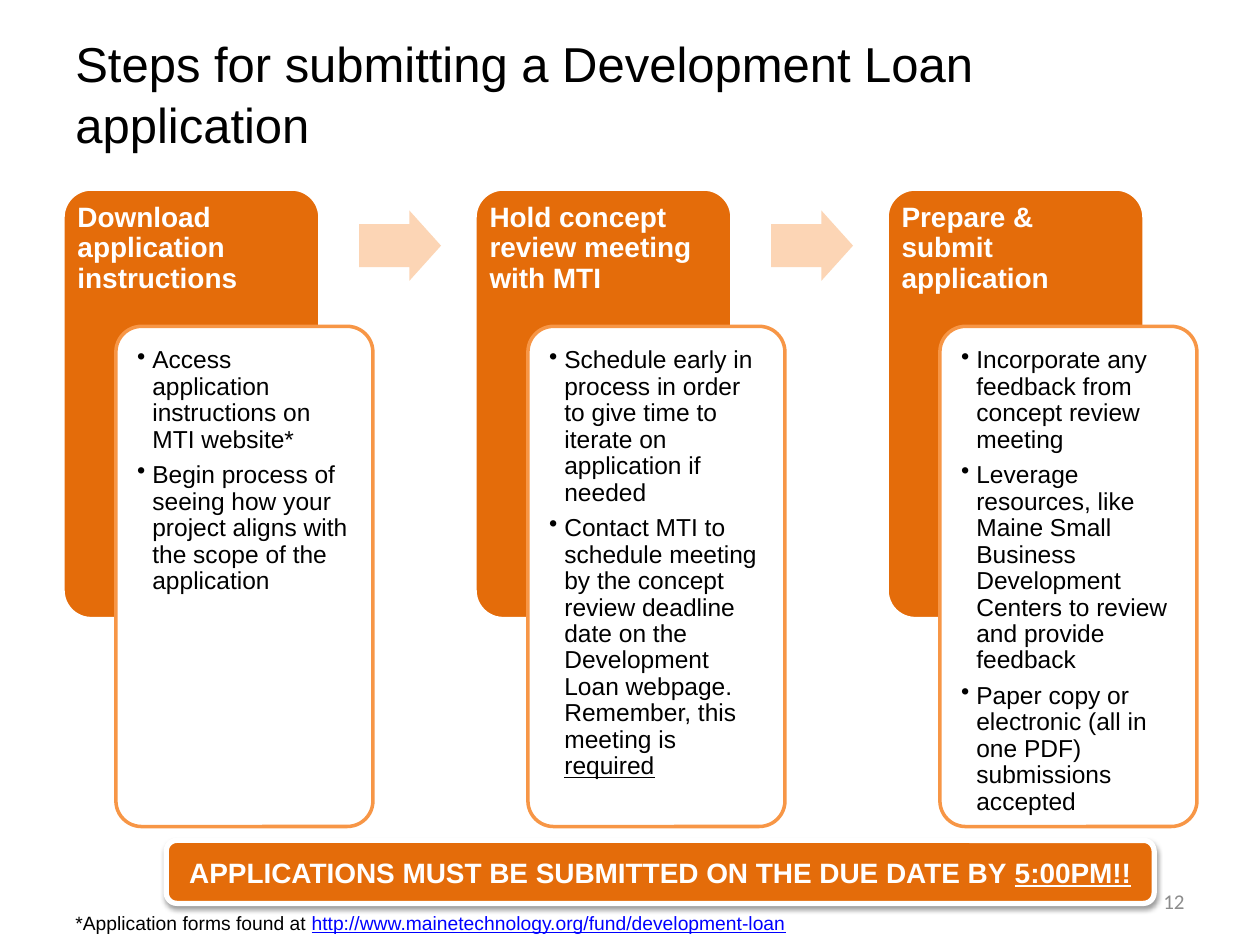
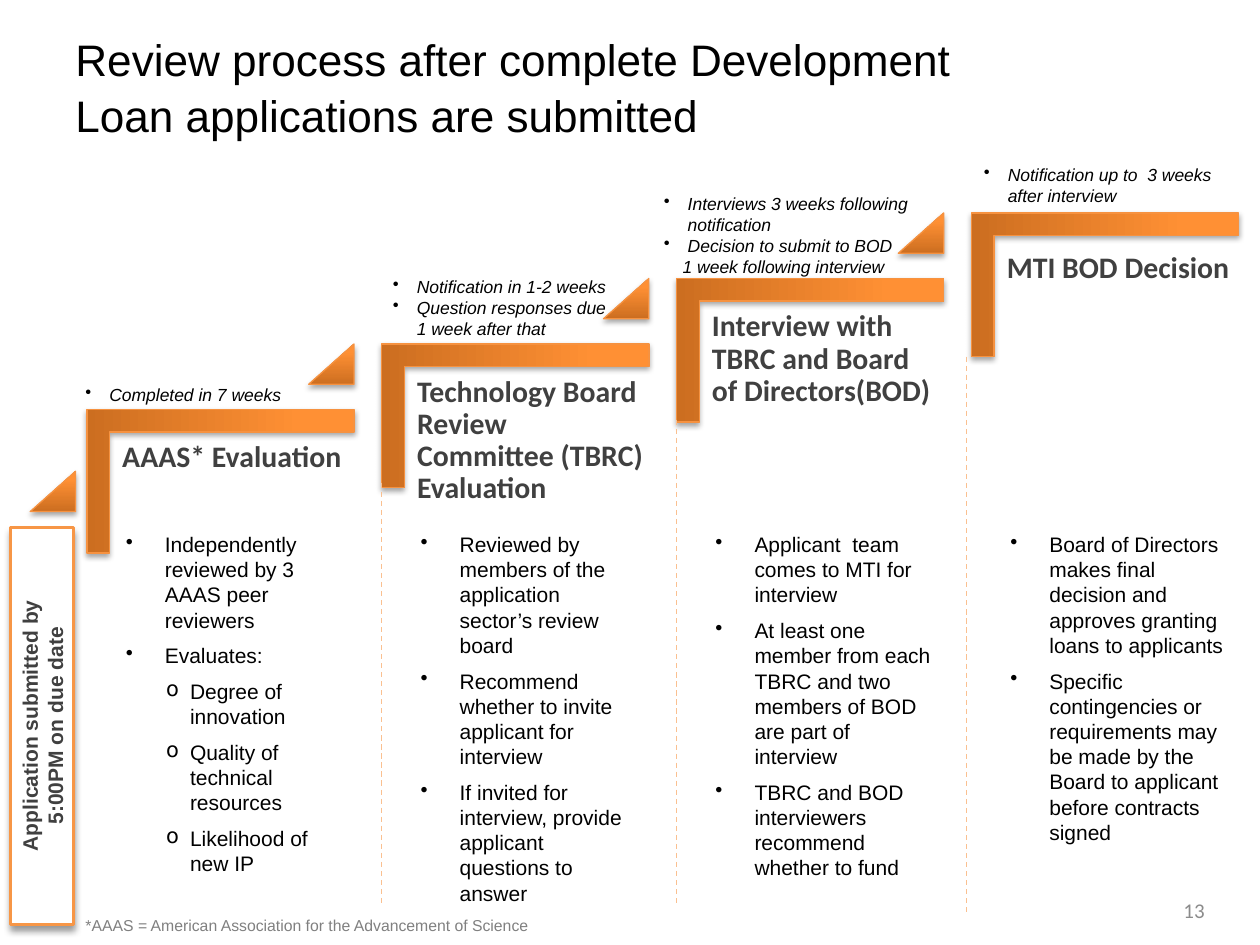
import copy

import lxml.etree
import pptx
import pptx.dml.color
import pptx.enum.dml
import pptx.enum.shapes
import pptx.enum.text
import pptx.oxml.ns
import pptx.util

PX = 9144
SHAPE = pptx.enum.shapes.MSO_SHAPE
ALIGN = pptx.enum.text.PP_ALIGN
ANCHOR = pptx.enum.text.MSO_ANCHOR
qn = pptx.oxml.ns.qn

COLORS = {
    "black": "000000", "white": "FFFFFF", "orange": "E46C0A", "border": "F79646",
    "peach": "FCD5B5", "dash": "FAC090", "step": "F69240", "dark": "404040",
    "gray": "808080", "number": "8C8C8C", "link": "0000FF",
}
GRADIENT = [(0, "CC6E20"), (0.8, "FF9034"), (1, "FF9136")]
STEP_LINE = ("step", 0.75)
STEP_SHADOW = (35, 3.1, 1.8)

BODY = {"name": "Arial", "size": 12, "color": "black"}
HEAD = {**BODY, "size": 16, "color": "white", "bold": True}
CARD = {**BODY, "size": 14}
NOTE = {**BODY, "size": 10, "italic": True}
STEP = {"name": "Calibri", "size": 17, "color": "dark", "bold": True}
NUMBER = {"name": "Calibri", "size": 12, "color": "number"}

CARD_BULLET = {"bullet": "•", "left": 12, "hang": 12, "line_spacing": 0.9,
               "space_before": 3, "space_after": 2}
STEP_BULLET = {"bullet": "•", "left": 31, "hang": 31, "space_before": 6}
SUB_BULLET = {"bullet": "o", "left": 51, "hang": 19, "space_before": 6}
NOTE_BULLET = {"bullet": "•", "left": 19, "hang": 19}


def px(*values):
    return [pptx.util.Emu(v * PX) for v in values]


def rgb(name):
    return pptx.dml.color.RGBColor.from_string(COLORS.get(name, name))


def format_run(r, fmt):
    for key, value in fmt.items():
        if key == "color":
            r.font.color.rgb = rgb(value)
        else:
            setattr(r.font, key, pptx.util.Pt(value) if key == "size" else value)


def format_paragraph(p, fmt, first):
    pPr = p._p.get_or_add_pPr()
    if "left" in fmt:
        pPr.set("marL", str(fmt["left"] * PX))
        pPr.set("indent", str(-fmt.get("hang", 0) * PX))
    if "bullet" in fmt:
        lxml.etree.SubElement(pPr, qn("a:buChar")).set("char", fmt["bullet"])
    for key in ("alignment", "line_spacing", "space_before", "space_after"):
        if key in fmt and not (first and key == "space_before"):
            value = fmt[key]
            setattr(p, key, pptx.util.Pt(value) if key.startswith("space") else value)


def write(sp, paras, font, para=None, anchor=ANCHOR.TOP, insets=(10, 5, 10, 5)):
    tf = sp.text_frame
    tf.word_wrap = True
    tf.vertical_anchor = anchor
    sides = ("margin_left", "margin_top", "margin_right", "margin_bottom")
    for side, value in zip(sides, px(*insets)):
        setattr(tf, side, value)
    for i, item in enumerate(paras):
        runs, fmt = item if isinstance(item, tuple) else (item, para or {})
        p = tf.paragraphs[0] if i == 0 else tf.add_paragraph()
        format_paragraph(p, fmt, i == 0)
        for text, extra in [(runs, {})] if isinstance(runs, str) else runs:
            for j, line in enumerate(text.split("\n")):
                if j:
                    p.add_line_break()
                r = p.add_run()
                r.text = line
                format_run(r, {**font, **extra})


def add_text(s, box, paras, font, **frame):
    write(s.shapes.add_textbox(*px(*box)), paras, font, **frame)


def add_gradient(sp, angle):
    sp.fill.gradient()
    sp.fill.gradient_angle = angle
    stops = sp._element.spPr.find(".//" + qn("a:gsLst"))
    stops.append(copy.deepcopy(stops[0]))
    for stop, (position, color) in zip(sp.fill.gradient_stops, GRADIENT):
        stop.position = position
        stop.color.rgb = rgb(color)


def add_shadow(sp, alpha, blur, dist):
    effects = sp._element.spPr.find(qn("a:effectLst"))
    outer = lxml.etree.SubElement(effects, qn("a:outerShdw"))
    values = {"blurRad": int(blur * 12700), "dist": int(dist * 12700),
              "dir": 5400000, "rotWithShape": 0}
    for key, value in values.items():
        outer.set(key, str(value))
    color = lxml.etree.SubElement(outer, qn("a:srgbClr"))
    color.set("val", COLORS["black"])
    lxml.etree.SubElement(color, qn("a:alpha")).set("val", str(alpha * 1000))


def paint(sp, fill=None, line=None, shadow=None, angle=90):
    if fill:
        sp.fill.solid()
        sp.fill.fore_color.rgb = rgb(fill)
    else:
        add_gradient(sp, angle)
    if line:
        sp.line.color.rgb = rgb(line[0])
        sp.line.width = pptx.util.Pt(line[1])
    else:
        sp.line.fill.background()
    sp.shadow.inherit = False
    if shadow:
        add_shadow(sp, *shadow)


def add_shape(s, kind, box, adj=(), rotation=0, **look):
    sp = s.shapes.add_shape(kind, *px(*box))
    sp.rotation = rotation
    for i, value in enumerate(adj):
        sp.adjustments[i] = value
    paint(sp, **look)
    return sp


def add_frame(prs, title, size, number, number_at):
    s = prs.slides.add_slide(prs.slide_layouts[6])
    add_text(s, (50, 19, 742, 125), [title], {**BODY, "size": size},
             para={"line_spacing": 1.05})
    add_text(s, (*number_at, 233, 40), [number], NUMBER,
             para={"alignment": ALIGN.RIGHT}, anchor=ANCHOR.MIDDLE)
    return s


def add_stage(s, x, y, heading, bullets, has_next):
    head = add_shape(s, SHAPE.ROUNDED_RECTANGLE, (x, y, 204, 341), [0.11],
                     fill="orange", line=("white", 2))
    write(head, [heading], HEAD, insets=(5, 5, 5, 20),
          para={"line_spacing": 0.9, "alignment": ALIGN.LEFT})
    card = add_shape(s, SHAPE.ROUNDED_RECTANGLE, (x + 42, y + 109, 204, 397), [0.1],
                     fill="white", line=("border", 2))
    write(card, bullets, CARD, insets=(11, 11, 11, 11),
          para={**CARD_BULLET, "alignment": ALIGN.LEFT})
    if has_next:
        add_shape(s, SHAPE.RIGHT_ARROW, (x + 235, y + 17, 65, 56), [0.61, 0.45],
                  fill="peach")


def add_triangle(s, x, y):
    add_shape(s, SHAPE.ISOSCELES_TRIANGLE, (x, y, 36, 32), [1],
              line=STEP_LINE, shadow=STEP_SHADOW)


def add_corner(s, x, y, width, height, thick):
    fb = s.shapes.build_freeform(x, y, scale=PX)
    fb.add_line_segments([
        (x + width, y), (x + width, y + thick), (x + thick, y + thick),
        (x + thick, y + height), (x, y + height)], close=True)
    paint(fb.convert_to_shape(), line=STEP_LINE, shadow=STEP_SHADOW, angle=0)


def add_step(s, x, y, heading, heading_dy, bullets, has_next):
    add_corner(s, x, y, 212, 114, 18)
    add_text(s, (x + 21, y + heading_dy, 191, 150), [heading], STEP,
             para={"line_spacing": 0.9}, insets=(7, 7, 4, 7))
    add_text(s, (x + 21, 417, 191, 300), bullets, BODY, para=STEP_BULLET)
    if has_next:
        add_triangle(s, x + 176, y - 52)


def add_divider(s, x, top, bottom):
    cx = s.shapes.add_connector(pptx.enum.shapes.MSO_CONNECTOR.STRAIGHT,
                                *px(x, top, x, bottom))
    cx.line.color.rgb = rgb("dash")
    cx.line.width = pptx.util.Pt(0.75)
    cx.line.dash_style = pptx.enum.dml.MSO_LINE.DASH
    lxml.etree.SubElement(cx._element.spPr, qn("a:effectLst"))


def build_submission(prs):
    s = add_frame(prs, "Steps for submitting a Development Loan application",
                  28, "12", (717, 695))
    stages = [
        ("Download application instructions", [
            "Access application instructions on MTI website*",
            "Begin process of seeing how your project aligns with the scope of the application"]),
        ("Hold concept review meeting with MTI", [
            "Schedule early in process in order to give time to iterate on application if needed",
            [("Contact MTI to schedule meeting by the concept review deadline date on the "
              "Development Loan webpage. Remember, this meeting is ", {}),
             ("required", {"underline": True})]]),
        ("Prepare & submit application", [
            "Incorporate any feedback from concept review meeting",
            "Leverage resources, like Maine Small Business Development Centers to review "
            "and provide feedback",
            "Paper copy or electronic (all in one PDF) submissions accepted"]),
    ]
    for i, (heading, bullets) in enumerate(stages):
        add_stage(s, 50 + 327 * i, 150, heading, bullets, i < len(stages) - 1)
    add_text(s, (50, 718, 667, 32), [[
        ("*Application forms found at ", {}),
        ("http://www.mainetechnology.org/fund/development-loan",
         {"color": "link", "underline": True})]], {**BODY, "size": 11})
    banner = add_shape(s, SHAPE.ROUNDED_RECTANGLE, (132, 667, 784, 50),
                       fill="orange", line=("white", 3), shadow=(38, 3.1, 1.6))
    write(banner, [[("APPLICATIONS MUST BE SUBMITTED ON THE DUE DATE BY ", {}),
                    ("5:00PM!!", {"underline": True})]], HEAD,
          para={"alignment": ALIGN.CENTER}, anchor=ANCHOR.MIDDLE, insets=(5, 5, 5, 5))


def build_review(prs):
    s = add_frame(
        prs, "Review process after complete Development Loan applications are submitted",
        25.2, "13", (733, 702))
    steps = [
        ("AAAS* Evaluation", 19, [
            "Independently reviewed by 3 AAAS peer reviewers", "Evaluates:",
            ("Degree of innovation", SUB_BULLET),
            ("Quality of technical resources", SUB_BULLET),
            ("Likelihood of new IP", SUB_BULLET)]),
        ("Technology Board Review Committee (TBRC) Evaluation", 19, [
            "Reviewed by members of the application sector’s review board",
            "Recommend whether to invite applicant for interview",
            "If invited for interview, provide applicant questions to answer"]),
        ("Interview with TBRC and Board of Directors(BOD)", 19, [
            "Applicant  team comes to MTI for interview",
            "At least one member from each TBRC and two members of BOD are part of interview",
            "TBRC and BOD interviewers recommend whether to fund"]),
        ("MTI BOD Decision", 25, [
            "Board of Directors makes final decision and approves granting loans to applicants",
            "Specific contingencies or requirements may be made by the Board to applicant "
            "before contracts signed"]),
    ]
    for i, (heading, heading_dy, bullets) in enumerate(steps):
        add_step(s, 69 + 234 * i, 325 - 52 * i, heading, heading_dy, bullets,
                 i < len(steps) - 1)
    for divider in [(303, 383, 717), (537, 333, 717), (767, 283, 726)]:
        add_divider(s, *divider)

    deadline = add_shape(s, SHAPE.RECTANGLE, (-124, 551, 315, 50), rotation=270,
                         fill="white", line=("border", 1.5), shadow=(40, 4, 3))
    write(deadline, ["Application submitted by", "5:00PM on due date"],
          {**BODY, "color": "dark", "bold": True}, para={"alignment": ALIGN.CENTER})
    add_triangle(s, 24, 374)
    add_text(s, (58, 722, 608, 28),
             ["*AAAS = American Association for the Advancement of Science"],
             {**BODY, "size": 9, "color": "gray"})

    notes = [
        ((58, 300, 194, 27), ["Completed in 7 weeks"]),
        ((302, 214, 223, 77), ["Notification in 1-2 weeks",
                               "Question responses due\n1 week after that"]),
        ((517, 148, 224, 77), ["Interviews 3 weeks following notification",
                               "Decision to submit to BOD",
                               ("1 week following interview", {"left": 15})]),
        ((771, 125, 229, 44), ["Notification up to  3 weeks after interview"]),
    ]
    for box, paras in notes:
        add_text(s, box, paras, NOTE, para=NOTE_BULLET)


def main():
    prs = pptx.Presentation()
    prs.slide_width, prs.slide_height = px(1000, 750)
    build_submission(prs)
    build_review(prs)
    prs.save("out.pptx")


if __name__ == "__main__":
    main()
